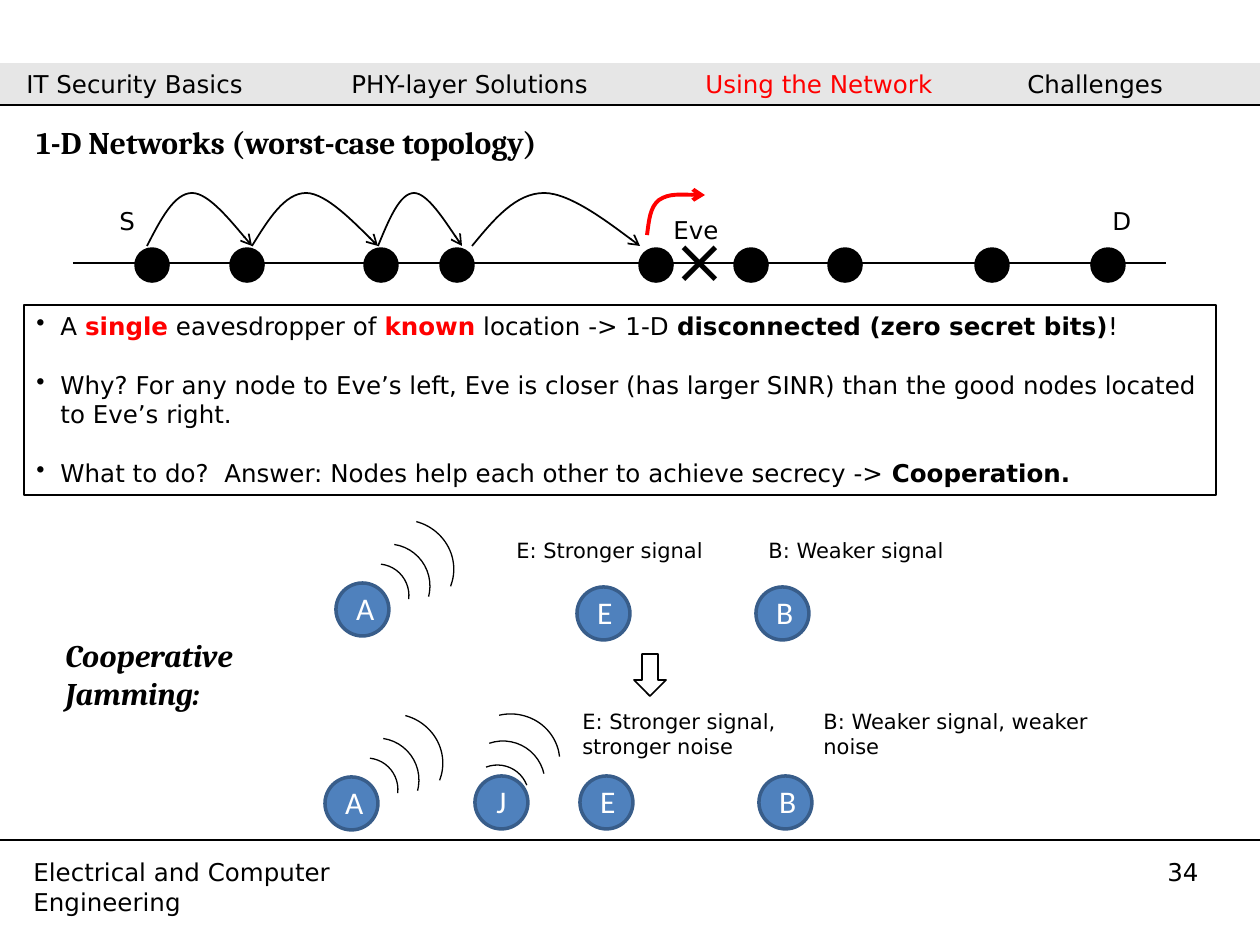
from pptx import Presentation
from pptx.dml.color import RGBColor
from pptx.enum.shapes import MSO_CONNECTOR as Connector, MSO_SHAPE as Shape
from pptx.enum.text import MSO_ANCHOR as Anchor, PP_ALIGN as Align
from pptx.oxml.ns import qn
from pptx.oxml.xmlchemy import OxmlElement
from pptx.util import Pt

SCALE = 914400 / 126
BODY, SERIF, NODE_FONT = "DejaVu Sans", "Cambria", "Calibri"
BLACK, RED, WHITE = "000000", "FF0000", "FFFFFF"
NODE_SIZE = 53


def px(value):
    """Turn pixels into EMU."""
    return round(value * SCALE)


def color(value):
    """Turn a hex string into a colour."""
    return RGBColor.from_string(value)


def add_child(parent, tag, **attributes):
    """Append an XML element with the given attributes."""
    child = OxmlElement(tag)
    for name, value in attributes.items():
        child.set(name, str(value))
    parent.append(child)
    return child


def add_span(para, text, size=14, font=BODY, fill=BLACK, bold=False, italic=False):
    """Add one formatted run."""
    span = para.add_run()
    span.text = text
    span.font.size, span.font.name = Pt(size), font
    span.font.bold, span.font.italic = bold, italic
    span.font.color.rgb = color(fill)


def add_text(page, left, top, width, height, text="", **style):
    """Add a wrapping text box and return its first paragraph."""
    box = page.shapes.add_textbox(px(left), px(top), px(width), px(height))
    box.text_frame.word_wrap = True
    para = box.text_frame.paragraphs[0]
    if text:
        add_span(para, text, **style)
    return para


def outline(shape, line, width):
    """Give a shape a plain outline, or none."""
    if line:
        shape.line.color.rgb = color(line)
        shape.line.width = Pt(width)
    else:
        shape.line.fill.background()


def add_figure(page, kind, left, top, width, height, fill=None, line=None, weight=1):
    """Add a preset shape without shadow."""
    shape = page.shapes.add_shape(kind, px(left), px(top), px(width), px(height))
    shape.shadow.inherit = False
    if fill:
        shape.fill.solid()
        shape.fill.fore_color.rgb = color(fill)
    else:
        shape.fill.background()
    outline(shape, line, weight)
    return shape


def add_rule(page, left, right, y):
    """Add a horizontal black line."""
    rule = page.shapes.add_connector(Connector.STRAIGHT, px(left), px(y), px(right), px(y))
    outline(rule, BLACK, 1)
    add_child(rule._element.spPr, "a:effectLst")


def add_curve(page, points, line, weight):
    """Draw a Bezier arrow through a start point and triples of curve points."""
    start, *rest = [(px(x), px(y)) for x, y in points]
    builder = page.shapes.build_freeform(*start)
    builder.add_line_segments(rest, close=False)
    shape = builder.convert_to_shape()
    shape.shadow.inherit = False
    shape.fill.background()
    outline(shape, line, weight)
    add_child(shape.line._get_or_add_ln(), "a:tailEnd", type="arrow")
    segments = list(shape._element.iter(qn("a:lnTo")))
    for first in range(0, len(segments), 3):
        curve = OxmlElement("a:cubicBezTo")
        segments[first].addprevious(curve)
        for segment in segments[first:first + 3]:
            curve.append(segment[0])
            segment.getparent().remove(segment)


def add_header(page, left, top, width, height):
    """Place the section bar with the current section in red."""
    add_figure(page, Shape.RECTANGLE, left, top, width, height, fill="E6E6E6")
    add_rule(page, left, left + width, top + height)
    para = add_text(page, left + 14, top, width - 49, height)
    tabs = add_child(para._p.get_or_add_pPr(), "a:tabLst")
    for stop in (325, 679, 1001):
        add_child(tabs, "a:tab", pos=px(stop), algn="l")
    add_span(para, "IT Security Basics\tPHY-layer Solutions\t")
    add_span(para, "Using the Network\t", fill=RED)
    add_span(para, "Challenges")


def add_footer(page, left, top, width):
    """Place the footer rule, department and page number."""
    add_rule(page, left, left + width, top)
    add_text(page, left + 21, top + 11, 474, 42, "Electrical and Computer Engineering")
    add_text(page, left + 1155, top + 11, 84, 42, "34")


def add_hop(page, start, end, top, height):
    """Draw one arched hop between two relays."""
    steps = ((0, 1), (.13, .5), (.26, 0), (.43, 0), (.59, 0), (1, 1), (1, 1))
    points = [(start + (end - start) * x, top + height * y) for x, y in steps]
    add_curve(page, points, BLACK, 1)


def add_network(page, left, top):
    """Place the line of relays with its hops and the eavesdropper."""
    add_rule(page, left, left + 1093, top + 70)
    for x in (63, 158, 292, 368, 567, 662, 756, 903, 1019):
        add_figure(page, Shape.OVAL, left + x, top + 56, 32, 32, BLACK, BLACK, 2)
    for start, end in ((74, 179), (179, 305), (305, 389), (399, 567)):
        add_hop(page, left + start, left + end, top, 53)
    bend = ((574, 42), (576, 27), (577, 14), (586, 7), (596, 0), (632, 2), (632, 2))
    add_curve(page, [(left + x, top + y) for x, y in bend], RED, 2.25)
    add_text(page, left + 588, top + 21, 53, 89, "×", size=36)
    for label, x, y, width in (("S", 34, 7, 42), ("D", 1027, 7, 42), ("Eve", 588, 16, 83)):
        add_text(page, left + x, top + y, width, 43, label)


def add_findings(page, left, top, width, height):
    """Place the framed bullet list."""
    frame = add_figure(page, Shape.RECTANGLE, left, top, width, height, line=BLACK, weight=.75)
    text = frame.text_frame
    text.word_wrap, text.vertical_anchor = True, Anchor.TOP
    plain, strong, alert = {}, {"bold": True}, {"bold": True, "fill": RED}
    bullets = (
        (("A ", plain), ("single", alert), (" eavesdropper of ", plain), ("known", alert),
         (" location -> 1-D ", plain), ("disconnected (zero secret bits)", strong), ("!", plain)),
        (("Why? For any node to Eve’s left, Eve is closer (has larger SINR) than "
          "the good nodes located to Eve’s right.", plain),),
        (("What to do?  Answer: Nodes help each other to achieve secrecy -> ", plain),
         ("Cooperation.", strong)),
    )
    for index, spans in enumerate(bullets):
        para = text.add_paragraph() if index else text.paragraphs[0]
        para.alignment = Align.LEFT
        para.space_before = Pt(16.75 if index else 0)
        layout = para._p.get_or_add_pPr()
        layout.set("marL", str(px(24)))
        layout.set("indent", str(px(-24)))
        add_child(layout, "a:buChar", char="•")
        for words, style in spans:
            add_span(para, words, **style)


def add_waves(page, left, top, offsets, turn):
    """Draw three radio wave arcs beside a node."""
    sizes = ((63, 63, 6.5), (84, 84, 8.6), (100, 97, 14.8))
    for (x, y), (width, height, angle) in zip(offsets, sizes):
        arc = add_figure(page, Shape.ARC, left + x, top + y, width, height, line=BLACK, weight=.75)
        arc.rotation = (angle + turn) % 360
        if width > 63:
            arc.adjustments[0], arc.adjustments[1] = 162, 3.67


def add_scenario(page, left, top, nodes, labels, waves):
    """Place one jamming scenario: nodes, their signals and notes."""
    for letter, x, y in nodes:
        node = add_figure(page, Shape.OVAL, left + x, top + y, NODE_SIZE, NODE_SIZE, "4F81BD", "385D8A", 2)
        node.text_frame.vertical_anchor = Anchor.MIDDLE
        para = node.text_frame.paragraphs[0]
        para.alignment, para.line_spacing = Align.CENTER, .99
        add_span(para, letter, size=18, font=NODE_FONT, fill=WHITE)
        if letter in waves:
            add_waves(page, left + x, top + y, *waves[letter])
    for words, x, y, width in labels:
        para = add_text(page, left + x, top + y, width, 63, words, size=12)
        para.line_spacing = .99


def main():
    """Build the slide and save it."""
    deck = Presentation()
    deck.slide_width, deck.slide_height = px(1260), px(945)
    page = deck.slides.add_slide(deck.slide_layouts[6])
    add_header(page, 0, 63, 1260, 42)
    add_footer(page, 0, 840, 1260)
    add_text(page, 24, 117, 742, 50, "1-D Networks (worst-case topology)", size=18, font=SERIF, bold=True)
    add_network(page, 73, 193)
    add_findings(page, 24, 305, 1192, 190)
    add_text(page, 53, 630, 239, 89, "Cooperative Jamming:", size=18, font=SERIF, bold=True, italic=True)
    waves = {"A": (((10, -19), (10, -39), (18, -63)), 0),
             "J": (((-9, -11), (-14, -35), (-15, -62)), -27.6)}
    add_scenario(page, 325, 515, (("A", 11, 68), ("E", 252, 72), ("B", 431, 72)),
                 (("E: Stronger signal", 179, 17, 242), ("B: Weaker signal", 431, 17, 294)), waves)
    add_figure(page, Shape.DOWN_ARROW, 634, 654, 32, 42, line=BLACK)
    add_scenario(page, 325, 707, (("A", 0, 70), ("J", 150, 69), ("E", 255, 69), ("B", 434, 69)),
                 (("E: Stronger signal, stronger noise", 245, -4, 242),
                  ("B: Weaker signal, weaker noise", 486, -4, 294)), waves)
    deck.save("out.pptx")


if __name__ == "__main__":
    main()
